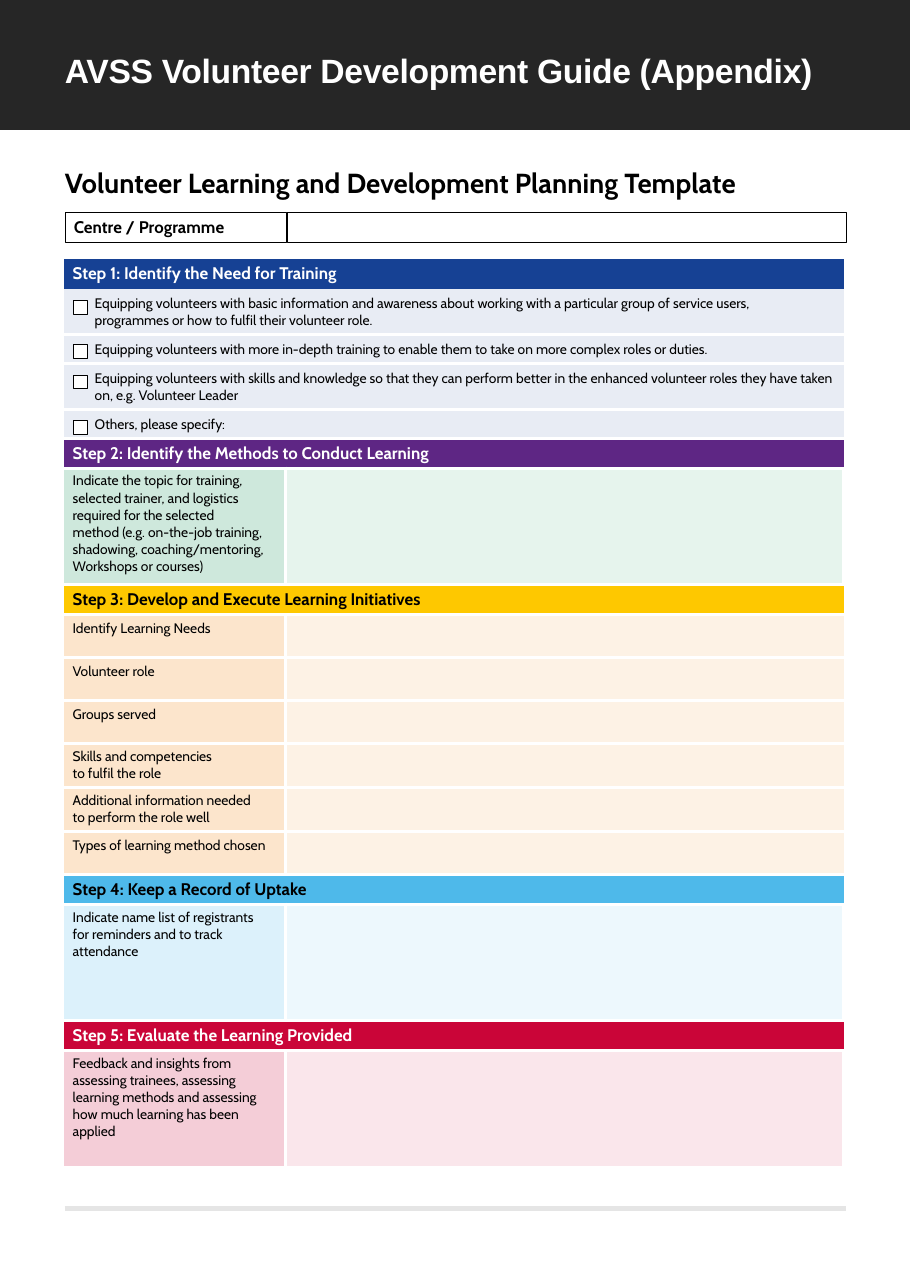
from dataclasses import dataclass

from lxml import etree
from pptx import Presentation
from pptx.dml.color import RGBColor
from pptx.enum.shapes import MSO_CONNECTOR, MSO_SHAPE
from pptx.enum.text import MSO_ANCHOR, MSO_AUTO_SIZE, PP_ALIGN
from pptx.oxml.ns import qn
from pptx.util import Inches, Pt

RECT = MSO_SHAPE.RECTANGLE
STRAIGHT = MSO_CONNECTOR.STRAIGHT
TOP = MSO_ANCHOR.TOP
LEFT = PP_ALIGN.LEFT
NO_FIT = MSO_AUTO_SIZE.NONE

COLUMNS, ROWS = 826, 1169
UNIT = Inches(0.01)
MARGIN, CONTENT = 59, 709
LABEL, VALUE = 201, 507
BOX = 12
BODY = "Cabin"

COLORS = {
    "black": "000000", "white": "FFFFFF", "banner": "262626", "rule": "E5E5E5",
    "blue": "164194", "blue_pale": "E8ECF4", "purple": "5E2684",
    "green": "CEE8DC", "green_pale": "E6F4ED", "yellow": "FEC800",
    "orange": "FCE5CC", "orange_pale": "FDF2E5", "sky": "4EB9EA",
    "sky_mid": "DCF1FB", "sky_pale": "EDF8FD", "red": "CA0538",
    "pink": "F4CDD7", "pink_pale": "FAE6EB",
}


@dataclass(frozen=True)
class Area:
    col: int
    row: int
    cols: int
    rows: int

    def emu(self) -> tuple:
        return tuple(n * UNIT for n in (self.col, self.row, self.cols, self.rows))


@dataclass(frozen=True)
class Style:
    size: float
    color: str = "black"
    bold: bool = False
    font: str = BODY
    before: float = 0
    spacing: float = 1


@dataclass(frozen=True)
class Heading:
    text: str
    fill: str
    color: str = "black"
    height: int = 27


@dataclass(frozen=True)
class Option:
    text: str
    height: int
    box_row: int


@dataclass(frozen=True)
class Entry:
    text: str
    height: int
    fill: str
    pale: str


def need(text: str, height: int = 39) -> Entry:
    return Entry(text, height, "orange", "orange_pale")


FORM = [
    Heading("Step 1: Identify the Need for Training", "blue", "white"),
    Option("Equipping volunteers with basic information and awareness about working with a "
           "particular group of service users, \vprogrammes or how to fulfil their volunteer role.",
           42, 273),
    Option("Equipping volunteers with more in-depth training to enable them to take on more "
           "complex roles or duties.", 26, 313),
    Option("Equipping volunteers with skills and knowledge so that they can perform better in the "
           "enhanced volunteer roles they have taken \von, e.g. Volunteer Leader", 42, 341),
    Option("Others, please specify:", 26, 382),
    Heading("Step 2: Identify the Methods to Conduct Learning", "purple", "white"),
    Entry("Indicate the topic for training, \vselected trainer, and logistics \v"
          "required for the selected \vmethod (e.g. on-the-job training,\v"
          "shadowing, coaching/mentoring, \vWorkshops or courses)", 106, "green", "green_pale"),
    Heading("Step 3: Develop and Execute Learning Initiatives", "yellow"),
    need("Identify Learning Needs"),
    need("Volunteer role"),
    need("Groups served"),
    need("Skills and competencies \vto fulfil the role", 40),
    need("Additional information needed \vto perform the role well", 40),
    need("Types of learning method chosen"),
    Heading("Step 4: Keep a Record of Uptake", "sky"),
    Entry("Indicate name list of registrants \vfor reminders and to track \vattendance",
          106, "sky_mid", "sky_pale"),
    Heading("Step 5: Evaluate the Learning Provided", "red", "white"),
    Entry("Feedback and insights from \vassessing trainees, assessing \v"
          "learning methods and assessing \vhow much learning has been \vapplied",
          106, "pink", "pink_pale"),
]


def rgb(name: str) -> RGBColor:
    return RGBColor.from_string(COLORS[name])


def write(tf, text: str, style: Style) -> None:
    p = tf.paragraphs[0]
    p.text = text
    p.alignment = LEFT
    p.space_before = Pt(style.before)
    p.line_spacing = style.spacing
    p.font.name = style.font
    p.font.size = Pt(style.size)
    p.font.bold = style.bold
    p.font.color.rgb = rgb(style.color)


def set_frame(tf, left: int, top: int) -> None:
    tf.auto_size = NO_FIT
    tf.word_wrap = True
    tf.vertical_anchor = TOP
    tf.margin_left, tf.margin_top = left * UNIT, top * UNIT
    tf.margin_right = tf.margin_bottom = 0


def add_rect(slide, area: Area, fill: str = "", line: float = 0):
    sp = slide.shapes.add_shape(RECT, *area.emu())
    sp.shadow.inherit = False
    if fill:
        sp.fill.solid()
        sp.fill.fore_color.rgb = rgb(fill)
    else:
        sp.fill.background()
    if line:
        sp.line.width = Pt(line)
        sp.line.color.rgb = rgb("black")
    else:
        sp.line.fill.background()
    return sp


def set_borders(cell, edges: str) -> None:
    tc_pr = cell._tc.get_or_add_tcPr()
    for i, edge in enumerate("LRTB"):
        ln = etree.Element(qn(f"a:ln{edge}"), w=str(Pt(2.25)))
        if edge in edges:
            solid = etree.SubElement(ln, qn("a:solidFill"))
            etree.SubElement(solid, qn("a:srgbClr"), val=COLORS["white"])
        else:
            etree.SubElement(ln, qn("a:noFill"))
        tc_pr.insert(i, ln)


def set_cell(cell, fill: str, edges: str, left: int = 0, top: int = 0) -> None:
    cell.margin_left, cell.margin_top = left * UNIT, top * UNIT
    cell.margin_right = cell.margin_bottom = 0
    cell.vertical_anchor = TOP
    cell.fill.solid()
    cell.fill.fore_color.rgb = rgb(fill)
    set_borders(cell, edges)


def add_form(slide) -> None:
    area = Area(MARGIN - 1, 235, LABEL + VALUE, sum(item.height for item in FORM))
    table = slide.shapes.add_table(len(FORM), 2, *area.emu()).table
    table.first_row = table.horz_banding = False
    for column, width in zip(table.columns, (LABEL, VALUE)):
        column.width = width * UNIT
    for i, item in enumerate(FORM):
        table.rows[i].height = item.height * UNIT
        label, value = table.cell(i, 0), table.cell(i, 1)
        edges = ("T" if i > 1 else "") + ("B" if i > 0 else "")
        lines = "\v" in item.text
        spacing = 1.02 if lines else 1
        if isinstance(item, Entry):
            set_cell(label, item.fill, edges + "R", 8, 4 if lines else 5)
            set_cell(value, item.pale, edges + ("LR" if item.height > 100 else "L"))
            style = Style(9, before=3.2 if lines else 3.4, spacing=spacing)
        else:
            label.merge(value)
            if isinstance(item, Heading):
                set_cell(label, item.fill, edges, 8, 4)
                set_cell(value, item.fill, edges)
                style = Style(11, item.color, True, before=2.9)
            else:
                set_cell(label, "blue_pale", edges, 28, 6)
                set_cell(value, "blue_pale", edges)
                style = Style(9, before=4.1 if lines else 4.3, spacing=spacing)
        write(label.text_frame, item.text, style)


def main() -> None:
    prs = Presentation()
    prs.slide_width, prs.slide_height = COLUMNS * UNIT, ROWS * UNIT
    slide = prs.slides.add_slide(prs.slide_layouts[5])

    banner = add_rect(slide, Area(0, 0, COLUMNS, 118), "banner")
    title = slide.shapes.title
    banner._element.addnext(title._element)
    title.left, title.top, title.width, title.height = Area(MARGIN - 1, 44, 722, 38).emu()
    set_frame(title.text_frame, 1, 1)
    write(title.text_frame, "AVSS Volunteer Development Guide (Appendix)",
          Style(22, "white", True, "Arial", 1))
    title.text_frame.paragraphs[0].runs[0]._r.get_or_add_rPr().set("spc", "-20")

    subtitle = slide.shapes.add_textbox(*Area(MARGIN - 1, 150, CONTENT, 32).emu())
    set_frame(subtitle.text_frame, 1, 1)
    write(subtitle.text_frame, "Volunteer Learning and Development Planning Template",
          Style(18, bold=True, before=1))

    add_form(slide)

    centre = add_rect(slide, Area(MARGIN, 193, LABEL, 27), line=0.25)
    set_frame(centre.text_frame, 8, 4)
    write(centre.text_frame, "Centre / Programme", Style(11, bold=True, before=2.9))
    add_rect(slide, Area(MARGIN + LABEL + 1, 193, VALUE, 27), line=0.25)

    for item in FORM:
        if isinstance(item, Option):
            add_rect(slide, Area(MARGIN + 8, item.box_row, BOX, BOX), "white", 0.5)

    x, y, width, _ = Area(MARGIN, 1097, CONTENT, 0).emu()
    rule = slide.shapes.add_connector(STRAIGHT, x, y, x + width, y)
    rule.line.width = Pt(3)
    rule.line.color.rgb = rgb("rule")
    etree.SubElement(rule._element.spPr, qn("a:effectLst"))

    prs.save("out.pptx")


if __name__ == "__main__":
    main()
